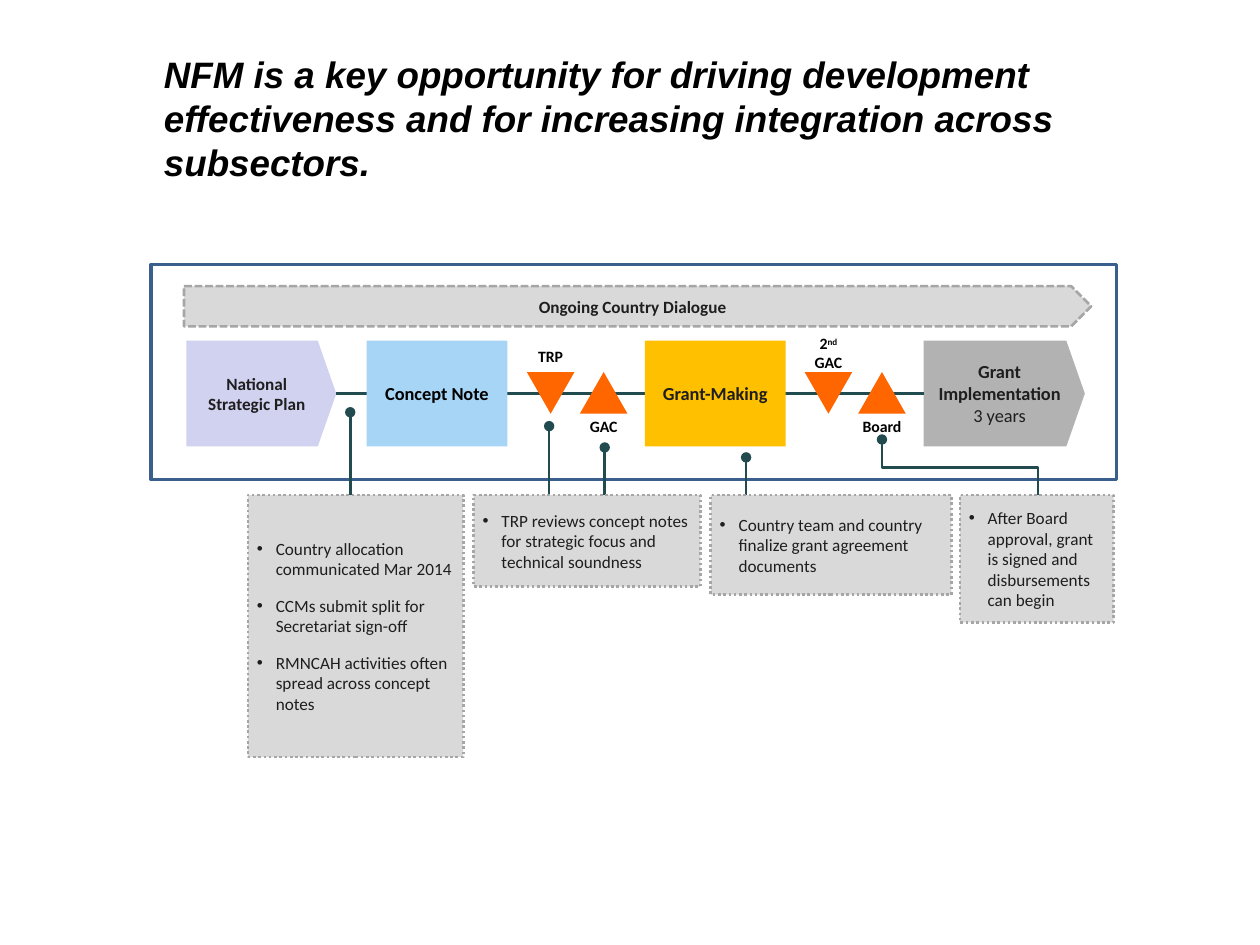
import lxml.etree
import pptx
import pptx.dml.color
import pptx.enum.dml
import pptx.enum.shapes
import pptx.enum.text
import pptx.oxml.ns
import pptx.util

Cm = pptx.util.Cm
Pt = pptx.util.Pt
qn = pptx.oxml.ns.qn
SHAPE = pptx.enum.shapes.MSO_SHAPE
CONNECTOR = pptx.enum.shapes.MSO_CONNECTOR
DASH = pptx.enum.dml.MSO_LINE
ALIGN = pptx.enum.text.PP_ALIGN
ANCHOR = pptx.enum.text.MSO_ANCHOR

BLACK, INK, TEAL, ORANGE = "000000", "1E1E1E", "224B50", "FF6600"
PALE_GREY, MID_GREY = "D9D9D9", "A6A6A6"


def rgb(value):
    """Turn a hex string into a colour."""
    return pptx.dml.color.RGBColor.from_string(value)


def style_font(font, size, color=INK, bold=False, name="Calibri"):
    """Give a font its face, size, colour and weight."""
    font.name, font.size, font.bold = name, Pt(size), bold
    font.color.rgb = rgb(color)


def add_block(shapes, kind, box, fill=None, line=None, width=1.5, dash=None):
    """Add a flat preset shape at a box given in centimetres."""
    block = shapes.add_shape(kind, *map(Cm, box))
    block.shadow.inherit = False
    if fill:
        block.fill.solid()
        block.fill.fore_color.rgb = rgb(fill)
    else:
        block.fill.background()
    if line:
        block.line.color.rgb = rgb(line)
        block.line.width = Pt(width)
        block.line.dash_style = dash
    else:
        block.line.fill.background()
    return block


def write(shape, lines, size, color=INK, bold=True, align=ALIGN.CENTER, insets=(0, 0.1)):
    """Fill a shape with vertically centred paragraphs."""
    frame = shape.text_frame
    frame.word_wrap = True
    frame.vertical_anchor = ANCHOR.MIDDLE
    frame.margin_left = frame.margin_right = Cm(insets[0])
    frame.margin_top = frame.margin_bottom = Cm(insets[1])
    frame.text = "\n".join(lines)
    for paragraph in frame.paragraphs:
        paragraph.alignment = align
        for run in paragraph.runs:
            style_font(run.font, size, color, bold)
    return frame.paragraphs


def add_link(slide, kind, start, end, dotted=True):
    """Add a teal connector, with a dot at its start if wanted."""
    link = slide.shapes.add_connector(kind, *map(Cm, start + end))
    link.line.color.rgb = rgb(TEAL)
    link.line.width = Pt(1.5)
    properties = link.element.spPr
    if dotted:
        lxml.etree.SubElement(properties.find(qn("a:ln")), qn("a:headEnd"), type="oval")
    lxml.etree.SubElement(properties, qn("a:effectLst"))
    return link


def add_elbow(slide, start, end):
    """Add a down-across-down connector between two points."""
    center_x, center_y = (start[0] + end[0]) / 2, (start[1] + end[1]) / 2
    half_across, half_down = (end[0] - start[0]) / 2, (end[1] - start[1]) / 2
    elbow = add_link(slide, CONNECTOR.ELBOW,
                     (center_x + half_down, center_y - half_across),
                     (center_x - half_down, center_y + half_across))
    elbow.element.spPr.find(qn("a:xfrm")).set("rot", "16200000")


def add_heading(slide, box, heading):
    """Place and format the slide title."""
    title = slide.shapes.title
    title.left, title.top, title.width, title.height = map(Cm, box)
    frame = title.text_frame
    frame.text = heading
    frame.word_wrap = True
    frame.auto_size = pptx.enum.text.MSO_AUTO_SIZE.NONE
    frame.vertical_anchor = ANCHOR.TOP
    paragraph = frame.paragraphs[0]
    paragraph.alignment = ALIGN.LEFT
    style_font(paragraph.runs[0].font, 21, BLACK, True, "Arial")
    paragraph.runs[0].font.italic = True


def add_review(slide, center, top, points_down, label, label_top, label_height):
    """Group a review triangle with its label."""
    review = slide.shapes.add_group_shape().shapes
    triangle = add_block(review, SHAPE.ISOSCELES_TRIANGLE, (center - 0.48, top, 0.96, 0.84), ORANGE)
    triangle.rotation = 180 if points_down else 0
    caption = review.add_textbox(*map(Cm, (center - 1.15, label_top, 2.3, label_height)))
    return write(caption, label, 9, BLACK)


def add_process(slide, box):
    """Draw the framed process with its dialogue banner, stages and reviews."""
    left, top, width, height = box
    row_top, row_height = top + 1.54, 2.13

    def add_stage(kind, offset, stage_width, fill, lines, size, color=INK):
        """Add one stage to the process row."""
        stage = add_block(slide.shapes, kind, (left + offset, row_top, stage_width, row_height), fill)
        if kind == SHAPE.PENTAGON:
            stage.adjustments[0] = 0.175
        write(stage, lines, size, color)
        return stage

    plan = add_stage(SHAPE.PENTAGON, 0.71, 3.02, "D1D1F0", ["National", "Strategic Plan"], 9.8)
    implementation = add_stage(SHAPE.PENTAGON, 15.57, 3.25, "B2B2B2",
                               ["Grant Implementation", "3 years"], 10.5)
    implementation.text_frame.paragraphs[1].runs[0].font.bold = False

    middle = row_top + row_height / 2
    flow = add_link(slide, CONNECTOR.STRAIGHT, (left + 3.73, middle), (left + 15.57, middle), False)
    flow.begin_connect(plan, 3)
    flow.end_connect(implementation, 1)

    add_stage(SHAPE.RECTANGLE, 4.34, 2.84, "A7D5F5", ["Concept Note"], 10.5, BLACK)
    add_stage(SHAPE.RECTANGLE, 9.95, 2.84, "FFC000", ["Grant-Making"], 10.5)

    reviews = [
        (8.05, True, ["TRP"], 1.55, 0.58),
        (9.12, False, ["GAC"], 2.98, 0.58),
        (13.65, True, ["2", "GAC"], 1.3, 0.97),
        (14.73, False, ["Board"], 2.98, 0.58),
    ]
    for center, points_down, label, label_top, label_height in reviews:
        caption = add_review(slide, left + center, top + 2.17, points_down,
                             label, top + label_top, label_height)
        if label[0] == "2":
            ordinal = caption[0].add_run()
            ordinal.text = "nd"
            style_font(ordinal.font, 9, BLACK, True)
            ordinal.font._element.set("baseline", "30000")

    banner = add_block(slide.shapes, SHAPE.PENTAGON, (left + 0.66, top + 0.44, 18.29, 0.81),
                       PALE_GREY, MID_GREY, dash=DASH.SQUARE_DOT)
    write(banner, ["Ongoing Country Dialogue"], 9.8)
    add_block(slide.shapes, SHAPE.RECTANGLE, box, line="3A5F8C", width=2)


def add_notes(slide, box):
    """Place the bulleted notes in a row and pin them to the process."""
    left, top, width, height = box
    pins = [(2.06, 1.67, 0), (6.07, 1.39, 0.41), (7.19, 0.96, 0.82), (10.04, 0.76, 1.04)]
    for offset, rise, drop in pins:
        add_link(slide, CONNECTOR.STRAIGHT, (left + offset, top - rise), (left + offset, top + drop))
    add_elbow(slide, (left + 12.78, top - 1.12), (left + 15.93, top))

    notes = [
        (0, 4.34, height, ["Country allocation communicated Mar 2014",
                           "CCMs submit split for Secretariat sign-off",
                           "RMNCAH activities often spread across concept notes"]),
        (4.55, 4.57, 1.85, ["TRP reviews concept notes for strategic focus and technical soundness"]),
        (9.33, 4.85, 2.01, ["Country team and country finalize grant agreement documents"]),
        (14.35, 3.1, 2.57, ["After Board approval, grant is signed and disbursements can begin"]),
    ]
    for offset, note_width, note_height, points in notes:
        note = add_block(slide.shapes, SHAPE.RECTANGLE, (left + offset, top, note_width, note_height),
                         PALE_GREY, MID_GREY, dash=DASH.ROUND_DOT)
        for index, point in enumerate(write(note, points, 9.8, INK, False, ALIGN.LEFT, (0.18, 0.03))):
            properties = point._p.get_or_add_pPr()
            properties.set("marL", str(Cm(0.38)))
            properties.set("indent", str(-Cm(0.38)))
            lxml.etree.SubElement(properties, qn("a:buFont"), typeface="Arial")
            lxml.etree.SubElement(properties, qn("a:buChar"), char="•")
            point.space_before = Pt(9 if index else 0)


def main():
    """Build and save the slide."""
    deck = pptx.Presentation()
    deck.slide_width, deck.slide_height = Cm(25.4), Cm(19.05)
    slide = deck.slides.add_slide(deck.slide_layouts[5])
    add_heading(slide, (3.05, 0.91, 19.23, 3.66),
                "NFM is a key opportunity for driving development effectiveness "
                "and for increasing integration across subsectors.")
    add_process(slide, (3.05, 5.33, 19.46, 4.34))
    add_notes(slide, (5, 9.98, 17.45, 5.28))
    deck.save("out.pptx")


if __name__ == "__main__":
    main()
